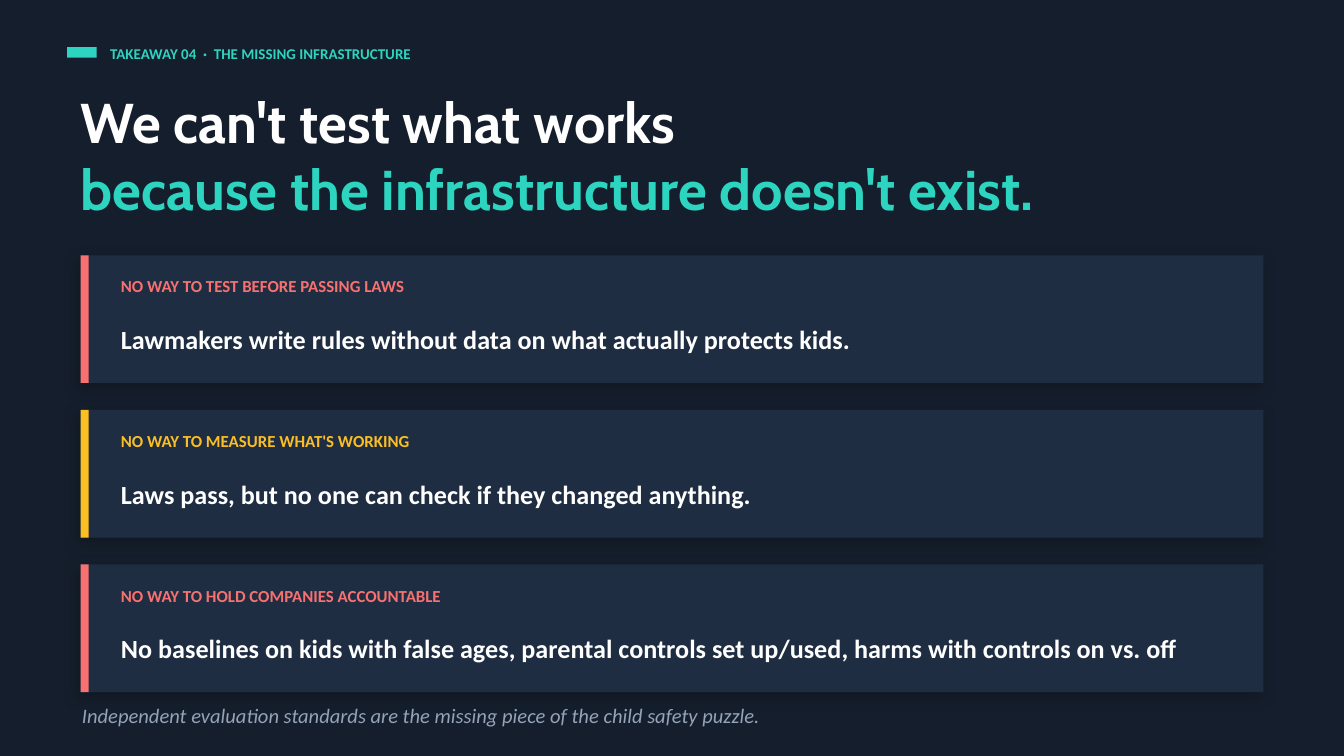
from lxml.etree import SubElement
from pptx import Presentation
from pptx.dml.color import RGBColor
from pptx.enum.shapes import MSO_SHAPE
from pptx.enum.text import MSO_ANCHOR as ANCHOR, MSO_AUTO_SIZE as AUTO, PP_ALIGN as ALIGN
from pptx.oxml.ns import qn
from pptx.util import Pt

PX = 4572  # 200 px to the inch
C = {
    "bg": "151E2C",
    "card": "1F2D42",
    "teal": "2DD4BF",
    "red": "F87171",
    "amber": "FBBF24",
    "white": "FFFFFF",
    "muted": "94A3B8",
    "shadow": "000000",
}


def rect(x, y, w, h, color):
    s = slide.shapes.add_shape(MSO_SHAPE.RECTANGLE, x * PX, y * PX, w * PX, h * PX)
    s.shadow.inherit = False
    s.fill.solid()
    s.fill.fore_color.rgb = RGBColor.from_string(C[color])
    s.line.fill.background()
    return s


def write(lines, x, y, w, h, *, size, font="Calibri", bold=True, italic=False,
          anchor=ANCHOR.MIDDLE, sp=None):
    """Write (text, color) lines into sp, or into a new text box."""
    sp = sp or slide.shapes.add_textbox(0, 0, 0, 0)
    sp.left, sp.top, sp.width, sp.height = x * PX, y * PX, w * PX, h * PX
    tf = sp.text_frame
    tf.word_wrap = True
    tf.auto_size = AUTO.NONE
    tf.vertical_anchor = anchor
    tf.margin_left = tf.margin_top = tf.margin_right = tf.margin_bottom = 0
    for i, (text, color) in enumerate(lines):
        p = tf.add_paragraph() if i else tf.paragraphs[0]
        p.alignment = ALIGN.LEFT
        r = p.add_run()
        r.text = text
        r.font.name, r.font.size = font, Pt(size)
        r.font.bold, r.font.italic = bold, italic
        r.font.color.rgb = RGBColor.from_string(C[color])


prs = Presentation()
prs.slide_width, prs.slide_height = 2000 * PX, 1125 * PX
slide = prs.slides.add_slide(prs.slide_layouts[5])
slide.background.fill.solid()
slide.background.fill.fore_color.rgb = RGBColor.from_string(C["bg"])

# Section marker
rect(100, 70, 44, 16, "teal")
write([("TAKEAWAY 04  ·  THE MISSING INFRASTRUCTURE", "teal")], 164, 66, 1400, 28, size=8)

# Title
write([("We can't test what works", "white"),
       ("because the infrastructure doesn't exist.", "teal")],
      120, 130, 1760, 194, size=30, font="Cabin", anchor=ANCHOR.TOP, sp=slide.shapes.title)

# Cards
cards = [
    ("red", "NO WAY TO TEST BEFORE PASSING LAWS",
     "Lawmakers write rules without data on what actually protects kids."),
    ("amber", "NO WAY TO MEASURE WHAT'S WORKING",
     "Laws pass, but no one can check if they changed anything."),
    ("red", "NO WAY TO HOLD COMPANIES ACCOUNTABLE",
     "No baselines on kids with false ages, parental controls set up/used, "
     "harms with controls on vs. off"),
]
for i, (accent, label, claim) in enumerate(cards):
    y = 380 + i * 230
    card = rect(120, y, 1760, 190, "card")
    effects = card._element.spPr.find(qn("a:effectLst"))
    shadow = SubElement(effects, qn("a:outerShdw"), blurRad=str(Pt(8)), dist=str(Pt(3)),
                        dir=str(135 * 60000), algn="bl", rotWithShape="0")
    tint = SubElement(shadow, qn("a:srgbClr"), val=C["shadow"])
    SubElement(tint, qn("a:alpha"), val="20000")

    rect(120, y, 12, 190, accent)
    write([(label, accent)], 180, y + 32, 1640, 28, size=9)
    write([(claim, "white")], 180, y + 104, 1640, 42, size=14)

# Closing note
write([("Independent evaluation standards are the missing piece of the child safety puzzle.",
        "muted")], 122, 1046, 1760, 38, size=11, bold=False, italic=True)

prs.save("out.pptx")
